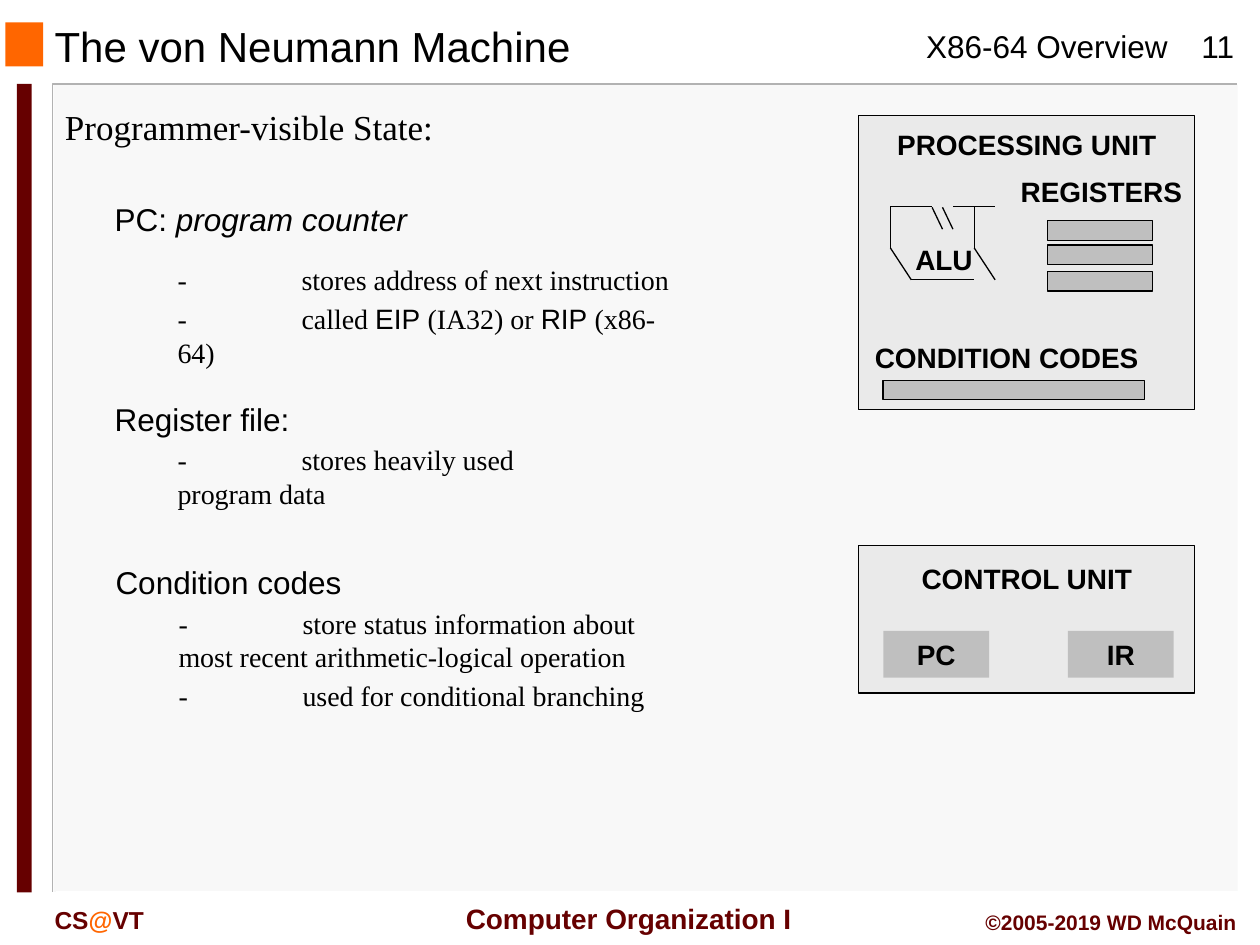
from dataclasses import dataclass

from pptx import Presentation
from pptx import util as u
from pptx.dml.color import RGBColor
from pptx.enum import shapes, text
from pptx.oxml.ns import qn
from lxml import etree

LEFT, CENTER, RIGHT = text.PP_ALIGN.LEFT, text.PP_ALIGN.CENTER, text.PP_ALIGN.RIGHT


@dataclass(frozen=True)
class Theme:
    ink: str = "000000"
    maroon: str = "660000"
    orange: str = "FF6600"
    canvas: str = "F8F8F8"
    edge: str = "B2B2B2"
    highlight: str = "FFFFFF"
    unit: str = "EAEAEA"
    store: str = "BFBFBF"
    sans: str = "Arial"
    serif: str = "Times New Roman"
    title: int = 24
    heading: int = 20
    topic: int = 18
    body: int = 16
    mark: int = 14
    small: int = 12
    hairline: float = 0.75


class SlideBuilder:
    def __init__(self, slide, theme):
        self.slide = slide
        self.theme = theme

    def run(self, paragraph, words, size, color=None, font=None, bold=False, italic=False):
        piece = paragraph.add_run()
        piece.text = words
        piece.font.size = u.Pt(size)
        piece.font.name = font or self.theme.sans
        piece.font.bold = bold
        piece.font.italic = italic
        piece.font.color.rgb = RGBColor.from_string(color or self.theme.ink)

    def frame(self, left, top, width, height, wrap=True, middle=False):
        area = self.slide.shapes.add_textbox(
            u.Cm(left), u.Cm(top), u.Cm(width), u.Cm(height)).text_frame
        area.word_wrap = wrap
        area.auto_size = text.MSO_AUTO_SIZE.SHAPE_TO_FIT_TEXT
        area.vertical_anchor = text.MSO_ANCHOR.MIDDLE if middle else text.MSO_ANCHOR.TOP
        return area

    def label(self, left, top, width, height, pieces, size, align=LEFT,
              bold=False, wrap=True, middle=False):
        line = self.frame(left, top, width, height, wrap, middle).paragraphs[0]
        line.alignment = align
        for words, color in pieces:
            self.run(line, words, size, color, bold=bold)

    def caption(self, left, top, width, words):
        self.label(left, top, width, 0.94, [(words, self.theme.ink)],
                   self.theme.body, CENTER, bold=True, wrap=False)

    def layout(self, paragraph, level, hanging, tabs, lead=None):
        paragraph.level = level
        props = paragraph._p.get_or_add_pPr()
        props.set("marL", str(u.Cm(hanging)))
        props.set("indent", str(-u.Cm(hanging)))
        props.set("defTabSz", str(u.Cm(2.5)))
        before = etree.SubElement(props, qn("a:spcBef"))
        if lead:
            etree.SubElement(before, qn("a:spcPts"), val=str(lead * 100))
        else:
            etree.SubElement(before, qn("a:spcPct"), val="20000")
        if tabs:
            stops = etree.SubElement(props, qn("a:tabLst"))
            for stop in tabs:
                etree.SubElement(stops, qn("a:tab"), pos=str(u.Cm(stop)), algn="l")

    def heading(self, left, top, width, height, words):
        line = self.frame(left, top, width, height).paragraphs[0]
        self.layout(line, 0, 0.64, ())
        self.run(line, words, self.theme.heading, font=self.theme.serif)

    def topic(self, left, top, width, height, name, details, lead=None):
        area = self.frame(left, top, width, height)
        line = area.paragraphs[0]
        self.layout(line, 1, 0, (12.7,))
        for words, italic in name:
            self.run(line, words, self.theme.topic, italic=italic)
        for order, detail in enumerate(details):
            line = area.add_paragraph()
            self.layout(line, 2, 1.27, (0.66, 12.7), None if order else lead)
            self.run(line, "\t-\t", self.theme.body, font=self.theme.serif)
            for words, font in detail:
                self.run(line, words, self.theme.body, font=font)

    def box(self, left, top, width, height, fill, outlined=False, words=None):
        block = self.slide.shapes.add_shape(
            shapes.MSO_SHAPE.RECTANGLE, u.Cm(left), u.Cm(top), u.Cm(width), u.Cm(height))
        block.shadow.inherit = False
        block.fill.solid()
        block.fill.fore_color.rgb = RGBColor.from_string(fill)
        if outlined:
            block.line.color.rgb = RGBColor.from_string(self.theme.ink)
            block.line.width = u.Pt(self.theme.hairline)
        else:
            block.line.fill.background()
        if words:
            line = block.text_frame.paragraphs[0]
            line.alignment = CENTER
            self.run(line, words, self.theme.body, bold=True)

    def edge(self, corners, color):
        start, *rest = [(u.Cm(x), u.Cm(y)) for x, y in corners]
        builder = self.slide.shapes.build_freeform(*start)
        builder.add_line_segments(rest, close=False)
        border = builder.convert_to_shape()
        border.shadow.inherit = False
        border.fill.background()
        border.line.color.rgb = RGBColor.from_string(color)
        border.line.width = u.Pt(1)

    def stroke(self, start, end):
        wire = self.slide.shapes.add_connector(
            shapes.MSO_CONNECTOR.STRAIGHT, *(u.Cm(v) for v in (*start, *end)))
        wire.line.color.rgb = RGBColor.from_string(self.theme.ink)
        wire.line.width = u.Pt(self.theme.hairline)
        etree.SubElement(wire._element.spPr, qn("a:effectLst"))


def draw_page(page, t):
    page.box(1.08, 1.7, 23.87, 16.28, t.canvas)
    page.edge([(24.93, 1.69), (1.06, 1.69), (1.06, 17.98)], t.edge)
    page.edge([(24.97, 1.7), (24.97, 17.98), (1.12, 17.98)], t.highlight)
    page.box(0.11, 0.45, 0.76, 0.89, t.orange)
    page.box(0.34, 1.69, 0.3, 16.3, t.maroon)
    page.label(18.42, 0.43, 5.46, 1.02, [("X86-64 Overview", t.ink)], t.topic, wrap=False)
    page.label(23.7, 0.43, 1.7, 1.02, [("11", t.ink)], t.topic, CENTER)
    page.label(8.98, 18.05, 7.39, 0.94, [("Computer Organization I", t.maroon)],
               t.body, CENTER, bold=True, wrap=False, middle=True)
    page.label(0.85, 18.11, 3.81, 0.84,
               [("CS", t.maroon), ("@", t.orange), ("VT", t.maroon)], t.mark, bold=True)
    page.label(19.26, 18.21, 5.92, 0.76, [("©2005-2019 WD McQuain", t.maroon)],
               t.small, RIGHT, bold=True)
    page.label(0.85, 0.34, 16.08, 1.17, [("The von Neumann Machine", t.ink)],
               t.title, middle=True)


def draw_state(page, t):
    page.heading(1.06, 2, 12.12, 1.12, "Programmer-visible State:")
    page.topic(2.06, 3.91, 12.12, 3.12,
               [("PC: ", False), ("program counter", True)],
               [[("stores address of next instruction", t.serif)],
                [("called ", t.serif), ("EIP ", t.sans), ("(IA32) or ", t.serif),
                 ("RIP ", t.sans), ("(x86-64)", t.serif)]], lead=14)
    page.topic(2.06, 7.93, 9.96, 1.85, [("Register file:", False)],
               [[("stores heavily used program data", t.serif)]])
    page.topic(2.08, 11.22, 12.12, 3.43, [("Condition codes", False)],
               [[("store status information about most recent "
                  "arithmetic-logical operation", t.serif)],
                [("used for conditional branching", t.serif)]])


def draw_control_unit(page, t):
    page.box(17.31, 11, 6.77, 2.97, t.unit, outlined=True)
    page.caption(17.31, 11.2, 6.78, "CONTROL UNIT")
    for left, register in ((17.81, "PC"), (21.53, "IR")):
        page.box(left, 12.72, 2.13, 0.94, t.store, words=register)


def draw_processing_unit(page, t):
    page.box(17.31, 2.33, 6.77, 5.92, t.unit, outlined=True)
    page.caption(17.31, 2.44, 6.78, "PROCESSING UNIT")
    page.caption(20.07, 3.4, 4.27, "REGISTERS")
    top, shoulder, base = 4.16, 5, 5.64
    for side, foot, notch in ((17.95, 18.37, 18.79), (19.64, 20.06, 19)):
        page.stroke((side, top), (side, shoulder))
        page.stroke((side, shoulder), (foot, base))
        page.stroke((notch, top + 0.02), (notch + 0.21, 4.62))
    page.stroke((18.37, base), (19.64, base))
    for left in (17.95, 19.22):
        page.stroke((left, top), (left + 0.84, top))
    page.caption(18.18, 4.77, 1.7, "ALU")
    for row in (4.45, 4.94, 5.47):
        page.box(21.12, row, 2.12, 0.4, t.store, outlined=True)
    page.caption(17.35, 6.75, 5.89, "CONDITION CODES")
    page.box(17.8, 7.67, 5.27, 0.38, t.store, outlined=True)


def main():
    deck = Presentation()
    deck.slide_width, deck.slide_height = u.Cm(25.4), u.Cm(19.05)
    theme = Theme()
    page = SlideBuilder(deck.slides.add_slide(deck.slide_layouts[6]), theme)
    for draw in (draw_page, draw_state, draw_control_unit, draw_processing_unit):
        draw(page, theme)
    deck.save("out.pptx")


if __name__ == "__main__":
    main()
